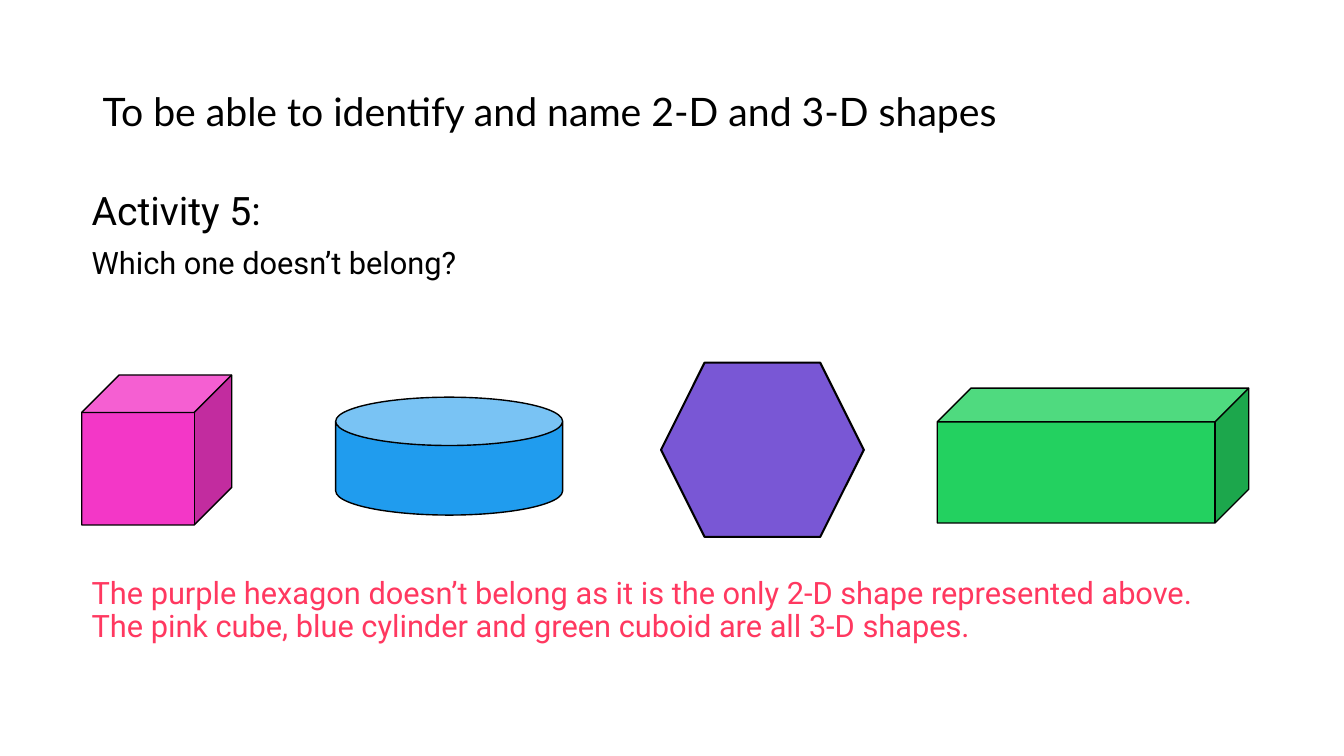
from pptx import Presentation
from pptx.dml.color import RGBColor
from pptx.enum.shapes import MSO_SHAPE as Kind
from pptx.enum.text import MSO_ANCHOR as Anchor
from pptx.util import Cm, Pt

BLACK = RGBColor(0x00, 0x00, 0x00)
RED = RGBColor(0xFF, 0x38, 0x60)
PINK = RGBColor(0xF3, 0x37, 0xC7)
BLUE = RGBColor(0x20, 0x9C, 0xEE)
PURPLE = RGBColor(0x79, 0x57, 0xD5)
GREEN = RGBColor(0x23, 0xD1, 0x60)

TEXTS = [
    ((2.34, 1.02, 24.38, 3.68), Anchor.MIDDLE, "Lato", BLACK,
     [("To be able to identify and name 2-D and 3-D shapes", 28)]),
    ((2.06, 4.7, 29.21, 2.8), Anchor.TOP, "Roboto", BLACK,
     [("Activity 5:", 28), ("Which one doesn’t belong?", 22)]),
    ((2.06, 14.43, 29.21, 2.36), Anchor.TOP, "Roboto", RED,
     [("The purple hexagon doesn’t belong as it is the only 2-D shape "
       "represented above. The pink cube, blue cylinder and green cuboid "
       "are all 3-D shapes.", 22)]),
]

SOLIDS = [
    (Kind.CUBE, (2.06, 9.45, 3.78, 3.78), PINK, 1, None),
    (Kind.CAN, (8.46, 10.01, 5.72, 2.97), BLUE, 1, 0.41),
    (Kind.HEXAGON, (16.66, 9.14, 5.11, 4.39), PURPLE, 1.5, None),
    (Kind.CUBE, (23.62, 9.78, 7.85, 3.4), GREEN, 1, None),
]

deck = Presentation()
deck.slide_width, deck.slide_height = Cm(33.87), Cm(19.05)
slide = deck.slides.add_slide(deck.slide_layouts[6])

for place, anchor, face, color, lines in TEXTS:
    frame = slide.shapes.add_textbox(*map(Cm, place)).text_frame
    frame.word_wrap = True
    frame.vertical_anchor = anchor
    frame.text = "\n".join(words for words, size in lines)
    for i, (para, (words, size)) in enumerate(zip(frame.paragraphs, lines)):
        para.line_spacing = 0.9
        para.space_before = Pt(10 if i else 0)
        for run in para.runs:
            run.font.name = face
            run.font.size = Pt(size)
            run.font.color.rgb = color

for kind, place, color, width, bend in SOLIDS:
    solid = slide.shapes.add_shape(kind, *map(Cm, place))
    solid.shadow.inherit = False
    solid.fill.solid()
    solid.fill.fore_color.rgb = color
    solid.line.color.rgb = BLACK
    solid.line.width = Pt(width)
    if bend:
        solid.adjustments[0] = bend

deck.save("out.pptx")
